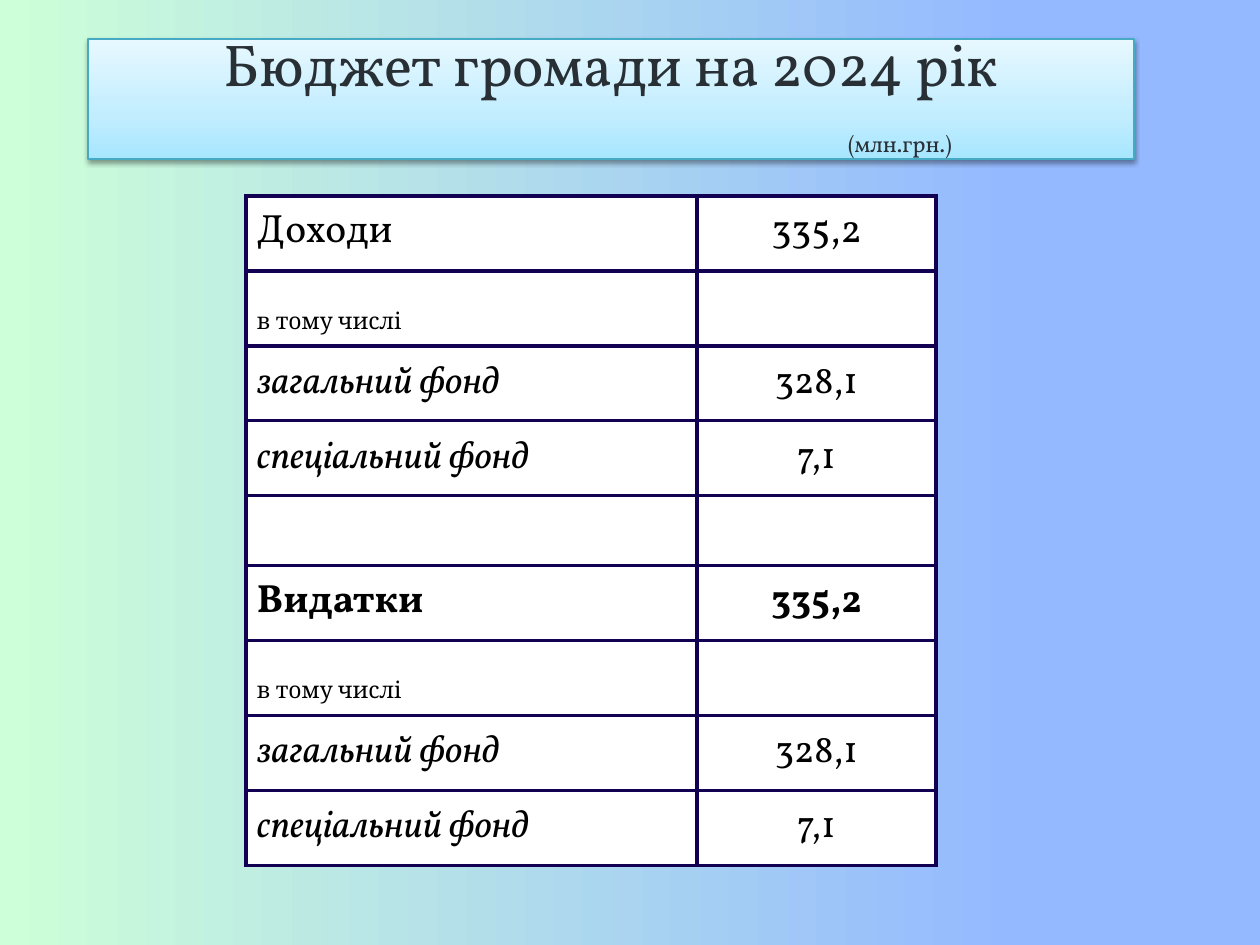
from lxml import etree
from pptx import Presentation
from pptx.dml.color import RGBColor
from pptx.enum.text import MSO_ANCHOR, MSO_AUTO_SIZE, PP_ALIGN
from pptx.oxml.ns import qn
from pptx.util import Pt

LEFT, CENTER = PP_ALIGN.LEFT, PP_ALIGN.CENTER
TOP, MIDDLE = MSO_ANCHOR.TOP, MSO_ANCHOR.MIDDLE
NO_AUTOFIT = MSO_AUTO_SIZE.NONE
TITLE_ONLY = 5
EMU_PER_PX = 7742

COLORS = {
    "title": "283035", "title_line": "46AAC5", "text": "000000",
    "cell": "FFFFFF", "border": "120052", "shadow": "000000",
}
BACKGROUND_STOPS = [(0, "CDFFD8"), (81, "94B9FF")]
TITLE_STOPS = [(0, "A7E6FF"), (35, "C1EDFF"), (100, "E7F8FF")]

TITLE = [("Бюджет громади на 2024 рік", 36, 0), ("(млн.грн.)", 14, 578)]
TITLE_BOX = (88, 39, 1046, 120)

STYLES = {
    "income": {"size": 24, "font": "Vollkorn"},
    "expense": {"size": 24, "font": "Vollkorn", "bold": True},
    "note": {"size": 14, "font": "Cambria"},
    "fund": {"size": 23, "font": "Vollkorn", "italic": True},
}
FUNDS = [
    ("в тому числі", "", "note"),
    ("загальний фонд", "328,1", "fund"),
    ("спеціальний фонд", "7,1", "fund"),
]
ROWS = [
    ("Доходи", "335,2", "income"), *FUNDS,
    ("", "", "note"),
    ("Видатки", "335,2", "expense"), *FUNDS,
]
TABLE_LEFT, TABLE_TOP = 246, 196
COLUMN_WIDTHS = [451, 239]
ROW_HEIGHT, GAP_HEIGHT = 75, 70
CELL_MARGIN = 11


def px(value):
    return value * EMU_PER_PX


def rgb(name):
    return RGBColor.from_string(COLORS[name])


def add_color(parent, value):
    fill = etree.SubElement(parent, qn("a:solidFill"))
    etree.SubElement(fill, qn("a:srgbClr"), val=value)


def set_gradient(fill, element, stops, angle):
    fill.gradient()
    fill.gradient_angle = angle
    stop_list = element.find(".//" + qn("a:gsLst"))
    for old_stop in list(stop_list):
        stop_list.remove(old_stop)
    for position, color in stops:
        stop = etree.SubElement(stop_list, qn("a:gs"), pos=str(position * 1000))
        etree.SubElement(stop, qn("a:srgbClr"), val=color)


def add_shadow(shape):
    shape.shadow.inherit = False
    effects = shape._element.spPr.find(qn("a:effectLst"))
    shadow = etree.SubElement(
        effects, qn("a:outerShdw"), blurRad=str(Pt(3.1)), dist=str(Pt(1.6)),
        dir="5400000", rotWithShape="0")
    color = etree.SubElement(shadow, qn("a:srgbClr"), val=COLORS["shadow"])
    etree.SubElement(color, qn("a:alpha"), val="38000")


def set_borders(cell):
    properties = cell._tc.get_or_add_tcPr()
    for index, side in enumerate(("lnL", "lnR", "lnT", "lnB")):
        line = etree.Element(qn("a:" + side), w=str(Pt(2.25)))
        add_color(line, COLORS["border"])
        properties.insert(index, line)


def add_title(slide):
    shape = slide.shapes.title
    shape.left, shape.top, shape.width, shape.height = map(px, TITLE_BOX)
    set_gradient(shape.fill, shape._element.spPr, TITLE_STOPS, 90)
    shape.line.color.rgb = rgb("title_line")
    shape.line.width = Pt(0.75)
    add_shadow(shape)
    frame = shape.text_frame
    frame.auto_size = NO_AUTOFIT
    frame.word_wrap = True
    frame.vertical_anchor = TOP
    frame.margin_left = frame.margin_right = frame.margin_top = frame.margin_bottom = 0
    frame.text = "\n".join(text for text, _, _ in TITLE)
    for paragraph, (_, size, indent) in zip(frame.paragraphs, TITLE):
        paragraph.alignment = CENTER
        paragraph.line_spacing = Pt(36)
        paragraph.space_before = Pt(0)
        paragraph.font.name = "Vollkorn"
        paragraph.font.size = Pt(size)
        paragraph.font.color.rgb = rgb("title")
        paragraph._p.get_or_add_pPr().set("marL", str(px(indent)))


def fill_cell(cell, text, style, alignment, italic):
    cell.fill.solid()
    cell.fill.fore_color.rgb = rgb("cell")
    set_borders(cell)
    cell.vertical_anchor = MIDDLE
    cell.margin_left = cell.margin_right = px(CELL_MARGIN)
    cell.margin_top = cell.margin_bottom = px(CELL_MARGIN)
    cell.text = text
    paragraph = cell.text_frame.paragraphs[0]
    paragraph.alignment = alignment
    paragraph.line_spacing = Pt(32.2)
    font = paragraph.font
    font.name = style["font"]
    font.size = Pt(style["size"])
    font.bold = style.get("bold", False)
    font.italic = italic
    font.color.rgb = rgb("text")


def add_budget_table(slide):
    heights = [ROW_HEIGHT if label else GAP_HEIGHT for label, _, _ in ROWS]
    table = slide.shapes.add_table(
        len(ROWS), len(COLUMN_WIDTHS), px(TABLE_LEFT), px(TABLE_TOP),
        px(sum(COLUMN_WIDTHS)), px(sum(heights))).table
    table.first_row = table.horz_banding = False
    for column, width in zip(table.columns, COLUMN_WIDTHS):
        column.width = px(width)
    for index, (label, amount, style_name) in enumerate(ROWS):
        table.rows[index].height = px(heights[index])
        style = STYLES[style_name]
        fill_cell(table.cell(index, 0), label, style, LEFT, style.get("italic", False))
        fill_cell(table.cell(index, 1), amount, style, CENTER, False)


def main():
    presentation = Presentation()
    presentation.slide_width, presentation.slide_height = px(1260), px(945)
    slide = presentation.slides.add_slide(presentation.slide_layouts[TITLE_ONLY])
    set_gradient(slide.background.fill, slide._element, BACKGROUND_STOPS, 0)
    add_budget_table(slide)
    add_title(slide)
    presentation.save("out.pptx")


if __name__ == "__main__":
    main()
